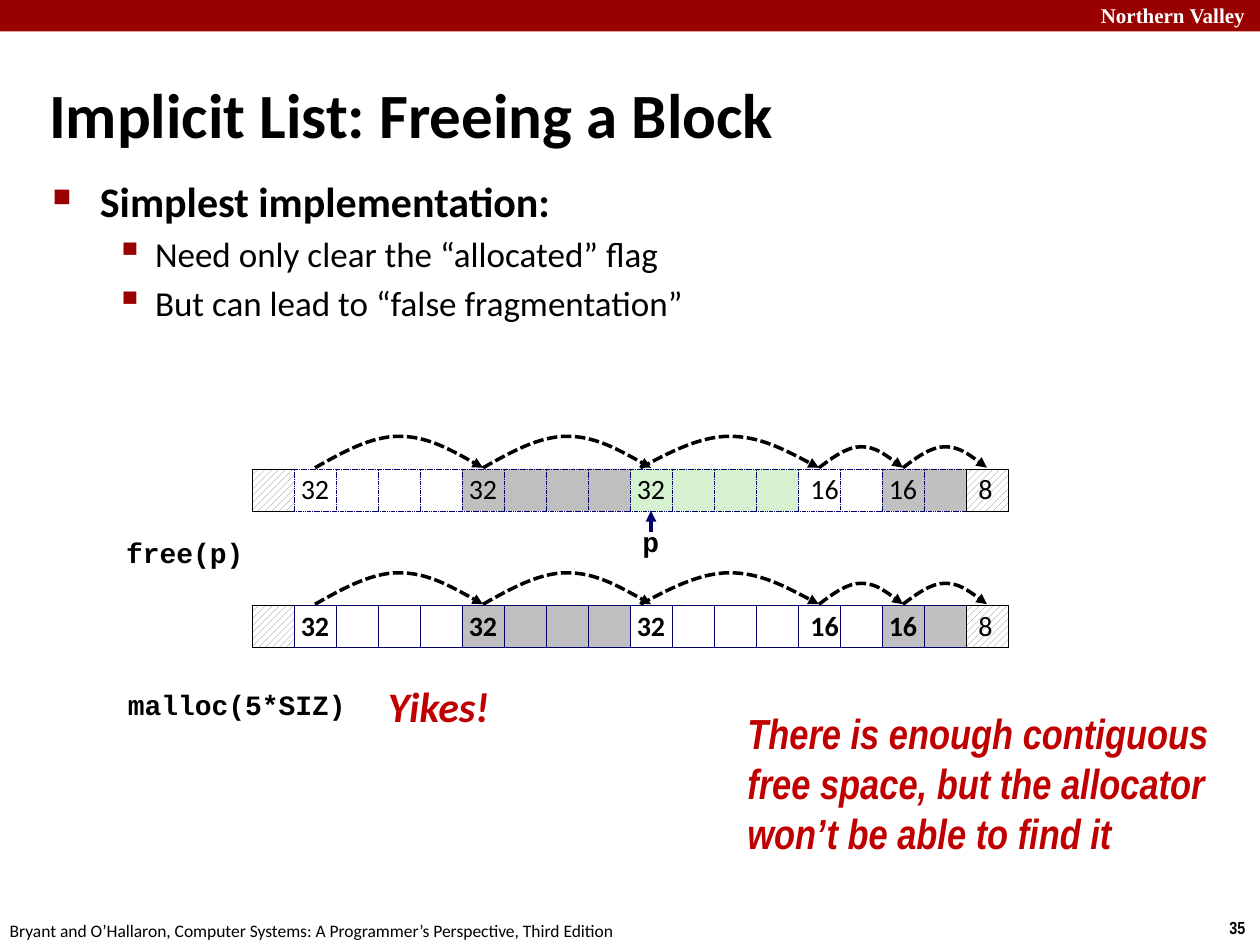
from dataclasses import dataclass
from itertools import accumulate

from lxml.etree import SubElement
from pptx import Presentation
from pptx.dml.color import RGBColor
from pptx.enum.dml import MSO_LINE, MSO_PATTERN
from pptx.enum.shapes import MSO_CONNECTOR, MSO_SHAPE
from pptx.enum.text import MSO_ANCHOR, PP_ALIGN
from pptx.oxml.ns import qn
from pptx.util import Pt


@dataclass(frozen=True)
class Theme:
    black: str = "000000"
    white: str = "FFFFFF"
    banner: str = "990000"
    accent: str = "C00000"
    navy: str = "000066"
    hatch: str = "808080"
    allocated: str = "BFBFBF"
    small_allocated: str = "C0C0C0"
    freed: str = "D5F1CF"
    body: str = "Calibri"
    code: str = "Courier New"
    narrow: str = "Arial Narrow"
    serif: str = "Times New Roman"
    title_size: int = 36
    heading_size: int = 24
    item_size: int = 20
    label_size: int = 16
    header_size: int = 12
    footer_size: int = 10


def color(value):
    return RGBColor.from_string(value)


class SlideBuilder:
    cell = 24
    left = 144

    def __init__(self, page, theme):
        self.page = page
        self.theme = theme

    def style(self, para, size, font=None, ink=None, bold=False, italic=False):
        para.font.name = font or self.theme.body
        para.font.size = Pt(size)
        para.font.bold = bold
        para.font.italic = italic
        para.font.color.rgb = color(ink or self.theme.black)

    def text(self, place, lines, size, wrap=False, anchor=MSO_ANCHOR.TOP, spacing=None, **look):
        box = self.page.shapes.add_textbox(*map(Pt, place))
        frame = box.text_frame
        frame.word_wrap = wrap
        frame.vertical_anchor = anchor
        for number, line in enumerate(lines):
            para = frame.add_paragraph() if number else frame.paragraphs[0]
            para.text = line
            para.line_spacing = spacing
            self.style(para, size, **look)
        return box

    def bullet(self, para, size, symbol, percent, margin, hanging):
        para.space_before = Pt(size * 0.2)
        props = para._p.get_or_add_pPr()
        props.set("marL", str(Pt(margin)))
        props.set("indent", str(-Pt(hanging)))
        ink = SubElement(props, qn("a:buClr"))
        SubElement(ink, qn("a:srgbClr"), val=self.theme.banner)
        SubElement(props, qn("a:buSzPct"), val=str(percent * 1000))
        SubElement(props, qn("a:buChar"), char=symbol)

    def bullets(self, place, heading, items):
        theme = self.theme
        box = self.text(place, [heading, *items], theme.item_size, wrap=True)
        first, *rest = box.text_frame.paragraphs
        self.style(first, theme.heading_size, bold=True)
        self.bullet(first, theme.heading_size, "■", 60, 27, 27)
        for para in rest:
            para.level = 1
            self.bullet(para, theme.item_size, "▪", 110, 58.5, 22.5)

    def rectangle(self, place, fill=None):
        shape = self.page.shapes.add_shape(MSO_SHAPE.RECTANGLE, *map(Pt, place))
        shape.shadow.inherit = False
        if fill:
            shape.fill.solid()
            shape.fill.fore_color.rgb = color(fill)
        else:
            shape.fill.patterned()
            shape.fill.pattern = MSO_PATTERN.WIDE_UPWARD_DIAGONAL
            shape.fill.fore_color.rgb = color(self.theme.hatch)
            shape.fill.back_color.rgb = color(self.theme.white)
        shape.line.fill.background()
        return shape

    def word(self, column, top, fill=None, label="", centered=False, bold=False, dash=None):
        place = (self.left + column * self.cell, top, self.cell, self.cell)
        shape = self.rectangle(place, fill)
        shape.line.color.rgb = color(self.theme.navy if fill else self.theme.black)
        shape.line.width = Pt(0.25)
        if dash:
            shape.line.dash_style = dash
        if label:
            frame = shape.text_frame
            frame.word_wrap = False
            frame.vertical_anchor = MSO_ANCHOR.MIDDLE
            para = frame.paragraphs[0]
            para.text = label
            para.alignment = PP_ALIGN.CENTER if centered else PP_ALIGN.LEFT
            para.line_spacing = 0.98
            self.style(para, self.theme.label_size, bold=bold)

    def arrow_line(self, shape, ink, dash=None):
        shape.line.color.rgb = color(ink)
        shape.line.width = Pt(2)
        if dash:
            shape.line.dash_style = dash
        SubElement(shape._element.spPr.find(qn("a:ln")), qn("a:tailEnd"), type="triangle")

    def arc(self, start, end, base, height):
        step = (end - start) / 6
        rises = (0.5, 1, 1, 1, 0.5, 0)
        points = [(Pt(start + step * number), Pt(base - height * rise))
                  for number, rise in enumerate(rises, 1)]
        builder = self.page.shapes.build_freeform(Pt(start), Pt(base))
        builder.add_line_segments(points, close=False)
        shape = builder.convert_to_shape()
        outline = shape._element.spPr.find(".//" + qn("a:path"))
        segments = outline.findall(qn("a:lnTo"))
        for half in (segments[:3], segments[3:]):
            curve = SubElement(outline, qn("a:cubicBezTo"))
            for segment in half:
                curve.append(segment[0])
                outline.remove(segment)
        shape.fill.background()
        shape.shadow.inherit = False
        self.arrow_line(shape, self.theme.black, MSO_LINE.SQUARE_DOT)

    def pointer(self, x, start, end):
        line = self.page.shapes.add_connector(
            MSO_CONNECTOR.STRAIGHT, Pt(x), Pt(start), Pt(x), Pt(end))
        self.arrow_line(line, self.theme.navy)
        SubElement(line._element.spPr, qn("a:effectLst"))

    def heap(self, top, blocks, bold=False, dash=None):
        starts = list(accumulate((length for length, _ in blocks), initial=1))
        self.word(0, top)
        for start, (length, fill) in zip(starts, blocks):
            label = str(length * 8)
            centered = (length, fill) != (2, self.theme.white)
            for offset in range(length):
                self.word(start + offset, top, fill, "" if offset else label,
                          centered, bold, dash)
        self.word(starts[-1], top, label="8")
        centers = [self.left + (start + 0.5) * self.cell for start in starts]
        for number, (start, end) in enumerate(zip(centers, centers[1:])):
            overlap = 6 if number == 2 else 0
            height = 18 if end - start > 2 * self.cell else 12
            self.arc(start - overlap, end, top - 0.7, height)


def main():
    theme = Theme()
    deck = Presentation()
    deck.slide_width, deck.slide_height = Pt(720), Pt(540)
    page = deck.slides.add_slide(deck.slide_layouts[6])
    slide = SlideBuilder(page, theme)

    slide.rectangle((0, 0, 720, 18), theme.banner)
    slide.text((622, -2.2, 103, 21.6), ["Northern Valley"], theme.header_size, wrap=True,
               font=theme.serif, ink=theme.white, bold=True)
    slide.text((695.5, 520.6, 24.5, 19.4), ["35"], theme.footer_size,
               font=theme.narrow, bold=True)
    slide.text((-1.5, 522, 366, 19.4),
               ["Bryant and O’Hallaron, Computer Systems: A Programmer’s Perspective, Third Edition"],
               theme.footer_size)
    slide.text((21, 42, 567, 45), ["Implicit List: Freeing a Block"], theme.title_size,
               wrap=True, anchor=MSO_ANCHOR.MIDDLE, bold=True)
    slide.bullets((23, 96.5, 654.5, 342), "Simplest implementation:",
                  ["Need only clear the “allocated” flag", "But can lead to “false fragmentation”"])

    before, after = (
        [(4, theme.white), (4, theme.allocated), (4, target),
         (2, theme.white), (2, theme.small_allocated)]
        for target in (theme.freed, theme.white))
    slide.heap(268, before, dash=MSO_LINE.SQUARE_DOT)
    slide.heap(346, after, bold=True)

    for place, label in (((65, 304, 82, 26), "free(p)"),
                         ((360, 298, 24, 26), "p"),
                         ((66, 391, 140, 26), "malloc(5*SIZ)")):
        slide.text(place, [label], theme.label_size, spacing=0.94, font=theme.code, bold=True)
    slide.pointer(372, 304, 292)

    warning = dict(ink=theme.accent, bold=True, italic=True)
    slide.text((214.5, 385, 73, 37.5), ["Yikes!"], theme.heading_size, wrap=True,
               spacing=1.02, **warning)
    slide.text((420, 400.5, 296, 117),
               ["There is enough contiguous", "free space, but the allocator\vwon’t be able to find it"],
               theme.heading_size, font=theme.narrow, **warning)

    deck.save("out.pptx")


if __name__ == "__main__":
    main()
